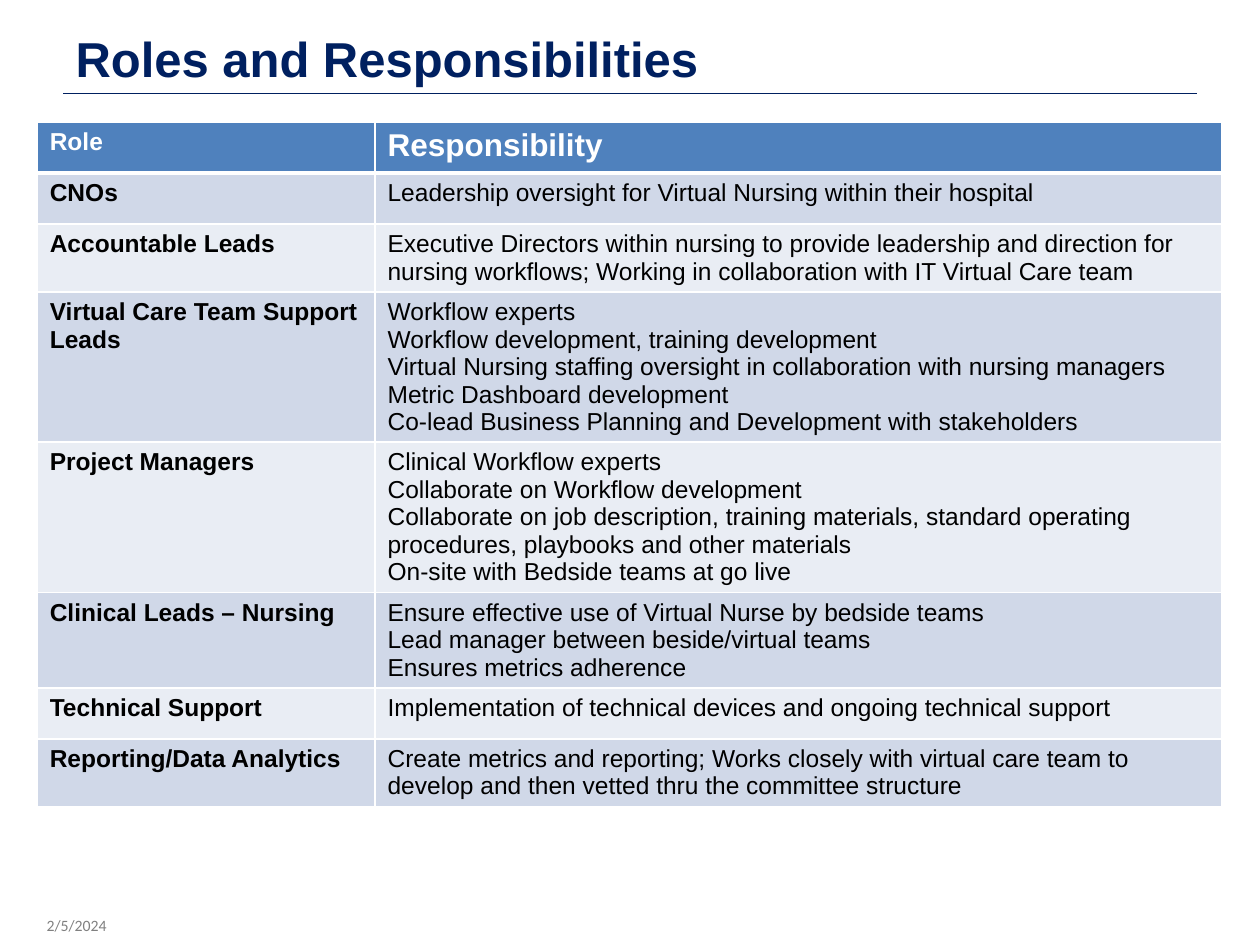
import pptx
import pptx.util
import pptx.dml.color
import pptx.enum.shapes
import pptx.enum.text
import pptx.oxml
import pptx.oxml.ns
from pptx.util import Cm

THEME = {
    "font": "Arial", "date_font": "Calibri",
    "navy": "002060", "header": "4F81BD", "bands": ("D0D8E8", "E9EDF4"),
    "white": "FFFFFF", "black": "000000", "grey": "808080",
    "title_size": 28, "responsibility_size": 18, "body_size": 14, "date_size": 9,
    "rule": 0.75, "border": 1, "header_border": 3,
}

TITLE = "Roles and Responsibilities"
DATE = "2/5/2024"
HEADINGS = ("Role", "Responsibility")
ROLES = [
    ("CNOs", ["Leadership oversight for Virtual Nursing within their hospital"]),
    ("Accountable Leads", [
        "Executive Directors within nursing to provide leadership and direction for "
        "nursing workflows; Working in collaboration with IT Virtual Care team"]),
    ("Virtual Care Team Support Leads", [
        "Workflow experts",
        "Workflow development, training development",
        "Virtual Nursing staffing oversight in collaboration with nursing managers",
        "Metric Dashboard development",
        "Co-lead Business Planning and Development with stakeholders"]),
    ("Project Managers", [
        "Clinical Workflow experts",
        "Collaborate on Workflow development",
        "Collaborate on job description, training materials, standard operating "
        "procedures, playbooks and other materials",
        "On-site with Bedside teams at go live"]),
    ("Clinical Leads – Nursing", [
        "Ensure effective use of Virtual Nurse by bedside teams",
        "Lead manager between beside/virtual teams",
        "Ensures metrics adherence"]),
    ("Technical Support", [
        "Implementation of technical devices and ongoing technical support"]),
    ("Reporting/Data Analytics", [
        "Create metrics and reporting; Works closely with virtual care team to "
        "develop and then vetted thru the committee structure"]),
]

COLUMN_WIDTHS = (Cm(6.81), Cm(17.07))
ROW_HEIGHT = Cm(1.03)


def rgb(name):
    return pptx.dml.color.RGBColor.from_string(name)


def style(text_frame, size, color, bold=False, font=THEME["font"]):
    for paragraph in text_frame.paragraphs:
        for run in paragraph.runs:
            run.font.name = font
            run.font.size = pptx.util.Pt(size)
            run.font.bold = bold
            run.font.color.rgb = rgb(color)


def set_borders(cell, bottom):
    """Draw white borders; they must stand before the fill in the cell XML."""
    properties = cell._tc.get_or_add_tcPr()
    widths = {"lnL": THEME["border"], "lnR": THEME["border"],
              "lnT": THEME["border"], "lnB": bottom}
    for position, (side, width) in enumerate(widths.items()):
        properties.insert(position, pptx.oxml.parse_xml(
            f'<a:{side} {pptx.oxml.ns.nsdecls("a")} w="{pptx.util.Pt(width)}">'
            f'<a:solidFill><a:srgbClr val="{THEME["white"]}"/></a:solidFill></a:{side}>'))


def fill_cell(cell, lines, fill, size, color, bold, bottom=THEME["border"]):
    cell.text_frame.text = "\n".join(lines)
    style(cell.text_frame, size, color, bold)
    cell.fill.solid()
    cell.fill.fore_color.rgb = rgb(fill)
    set_borders(cell, bottom)


def add_title(slide):
    title = slide.shapes.title
    title.left, title.top, title.width, title.height = Cm(1.27), Cm(0.3), Cm(22.86), Cm(1.58)
    title.text_frame.text = TITLE
    title.text_frame.vertical_anchor = pptx.enum.text.MSO_ANCHOR.BOTTOM
    title.text_frame.paragraphs[0].alignment = pptx.enum.text.PP_ALIGN.LEFT
    style(title.text_frame, THEME["title_size"], THEME["navy"], bold=True)

    rule = slide.shapes.add_connector(
        pptx.enum.shapes.MSO_CONNECTOR.STRAIGHT, Cm(1.27), Cm(1.88), Cm(24.13), Cm(1.88))
    rule.line.color.rgb = rgb(THEME["navy"])
    rule.line.width = pptx.util.Pt(THEME["rule"])
    rule._element.spPr.append(pptx.oxml.parse_xml(
        f'<a:effectLst {pptx.oxml.ns.nsdecls("a")}/>'))


def add_roles(slide):
    row_count = len(ROLES) + 1
    roles = slide.shapes.add_table(
        row_count, len(HEADINGS), Cm(0.75), Cm(2.46),
        sum(COLUMN_WIDTHS), ROW_HEIGHT * row_count).table
    for column, width in zip(roles.columns, COLUMN_WIDTHS):
        column.width = width
    for row in roles.rows:
        row.height = ROW_HEIGHT

    heading_sizes = (THEME["body_size"], THEME["responsibility_size"])
    for column, (heading, size) in enumerate(zip(HEADINGS, heading_sizes)):
        fill_cell(roles.cell(0, column), [heading], THEME["header"], size,
                  THEME["white"], True, THEME["header_border"])
    for index, (role, duties) in enumerate(ROLES):
        band = THEME["bands"][index % 2]
        for column, lines in enumerate(([role], duties)):
            fill_cell(roles.cell(index + 1, column), lines, band,
                      THEME["body_size"], THEME["black"], column == 0)


def add_date(slide):
    date = slide.shapes.add_textbox(Cm(-0.33), Cm(18.34), Cm(26.14), Cm(0.64)).text_frame
    date.word_wrap = True
    date.margin_left = date.margin_right = Cm(1.27)
    date.text = DATE
    style(date, THEME["date_size"], THEME["grey"], font=THEME["date_font"])


def main():
    deck = pptx.Presentation()
    deck.slide_width, deck.slide_height = Cm(25.4), Cm(19.05)
    slide = deck.slides.add_slide(deck.slide_layouts.get_by_name("Title Only"))
    add_title(slide)
    add_roles(slide)
    add_date(slide)
    deck.save("out.pptx")


if __name__ == "__main__":
    main()
